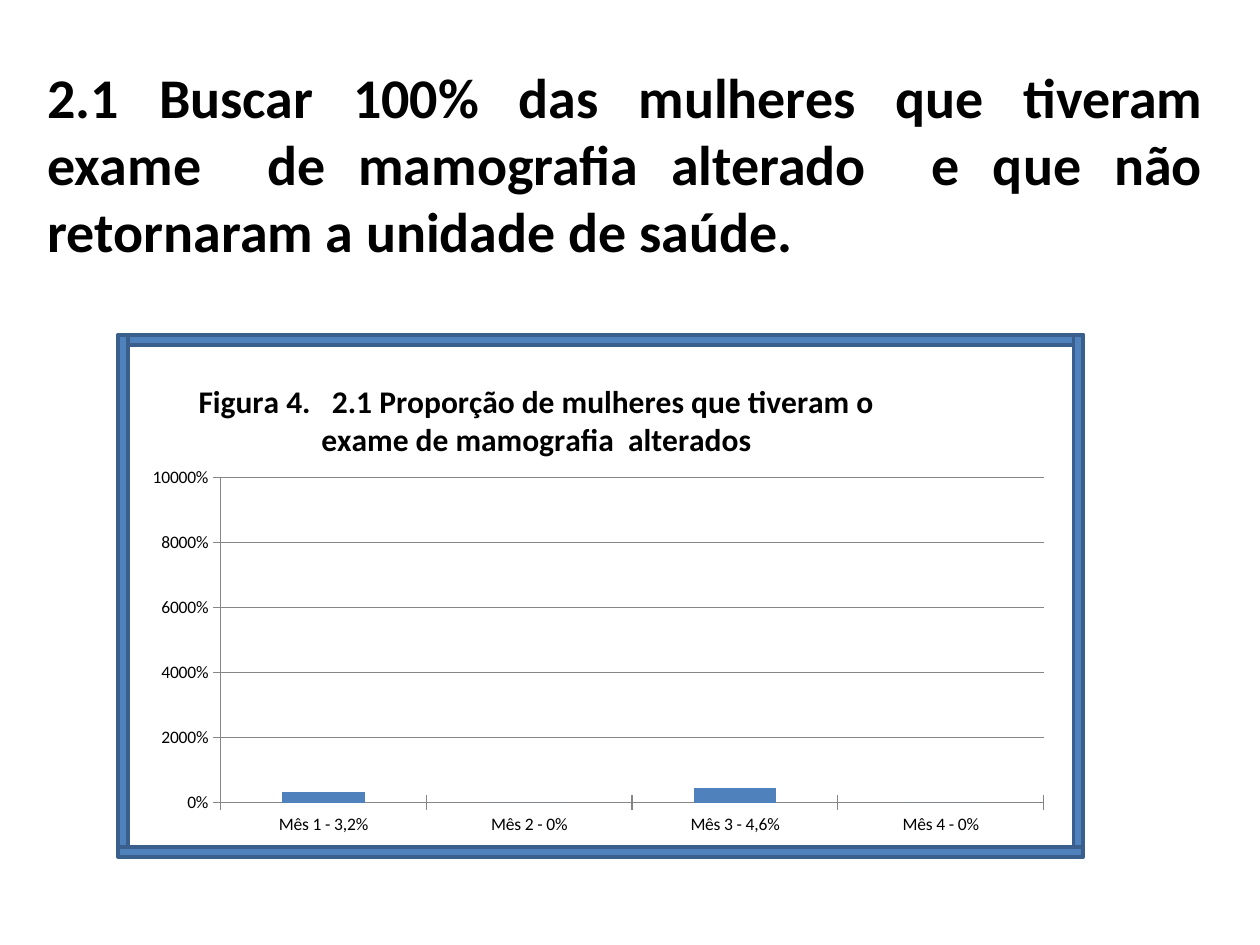
from lxml.etree import SubElement
from pptx import Presentation
from pptx.chart.data import CategoryChartData
from pptx.dml.color import RGBColor
from pptx.enum.chart import XL_CHART_TYPE, XL_TICK_MARK
from pptx.enum.shapes import MSO_SHAPE
from pptx.enum.text import MSO_ANCHOR, MSO_AUTO_SIZE, PP_ALIGN
from pptx.oxml import parse_xml
from pptx.oxml.ns import nsdecls, qn
from pptx.util import Pt


def color(value):
    return RGBColor.from_string(value)


def write(tf, text, size=32, bold=True, align=PP_ALIGN.JUSTIFY, font="Calibri", fill="000000"):
    p = tf.paragraphs[0]
    p.alignment = align
    r = p.add_run()
    r.text = text
    r.font.size, r.font.bold, r.font.name = Pt(size), bold, font
    r.font.color.rgb = color(fill)
    return p


def manual_layout(inner=False, **fractions):
    layout = parse_xml(f"<c:layout {nsdecls('c')}><c:manualLayout/></c:layout>")
    entries = {"layoutTarget": "inner"} if inner else {}
    entries.update(xMode="edge", yMode="edge", **fractions)
    for tag, value in entries.items():
        SubElement(layout[0], qn(f"c:{tag}")).set("val", str(value))
    return layout


class Deck:
    """Hold the slide, its colours and its element builders."""

    blue, border, grid = "4F81BD", "3A5F8C", "868686"

    def __init__(self, prs):
        self.s = prs.slides.add_slide(prs.slide_layouts[1])
        title = self.s.shapes.title._element
        title.getparent().remove(title)

    def body(self, text, x, y, w, h):
        sp = self.s.placeholders[1]
        sp.left, sp.top, sp.width, sp.height = Pt(x), Pt(y), Pt(w), Pt(h)
        tf = sp.text_frame
        tf.word_wrap = True
        tf.auto_size = MSO_AUTO_SIZE.NONE
        tf.vertical_anchor = MSO_ANCHOR.TOP
        p = write(tf, text)
        pPr = p._p.get_or_add_pPr()
        pPr.set("marL", "0")
        pPr.set("indent", "0")
        SubElement(pPr, qn("a:buNone"))

    def bar(self, x, y, w, h):
        sp = self.s.shapes.add_shape(MSO_SHAPE.RECTANGLE, Pt(x), Pt(y), Pt(w), Pt(h))
        sp.shadow.inherit = False
        sp.fill.solid()
        sp.fill.fore_color.rgb = color(self.blue)
        sp.line.color.rgb = color(self.border)
        sp.line.width = Pt(2)

    def frame(self, x, y, w, h, t):
        for top in (y, y + h):
            self.bar(x, top, w, t)
        for left in (x, x + w - t):
            self.bar(left, y, t, h)

    def chart(self, title, values, x, y, w, h):
        data = CategoryChartData()
        data.categories = list(values)
        data.add_series("Series 1", values.values())
        chart = self.s.shapes.add_chart(
            XL_CHART_TYPE.COLUMN_CLUSTERED, Pt(x), Pt(y), Pt(w), Pt(h), data).chart
        chart.has_legend = False
        chart.font.name, chart.font.size = "Calibri", Pt(10)
        chart.font.color.rgb = color("000000")
        write(chart.chart_title.text_frame, title, size=18, align=PP_ALIGN.CENTER)
        chart.chart_title.include_in_layout = False
        plot = chart.plots[0]
        plot.gap_width, plot.vary_by_categories = 150, False
        fill = plot.series[0].format.fill
        fill.solid()
        fill.fore_color.rgb = color(self.blue)
        axis = chart.value_axis
        axis.minimum_scale, axis.maximum_scale, axis.major_unit = 0, 100, 20
        axis.has_major_gridlines = True
        axis.tick_labels.number_format = "0%"
        axis.tick_labels.number_format_is_linked = False
        for item in (axis, chart.category_axis):
            item.major_tick_mark = XL_TICK_MARK.CROSS
        for item in (axis, chart.category_axis, axis.major_gridlines):
            item.format.line.color.rgb = color(self.grid)
            item.format.line.width = Pt(0.75)
        space = chart._chartSpace
        for old in space.xpath(".//c:title/c:layout | .//c:plotArea/c:layout"):
            old.getparent().remove(old)
        space.xpath(".//c:title/c:tx")[0].addnext(manual_layout(x=0.06, y=0.04))
        space.xpath(".//c:plotArea")[0].insert(
            0, manual_layout(True, x=0.09, y=0.25, w=0.89, h=0.66))


def main():
    prs = Presentation()
    prs.slide_width, prs.slide_height = Pt(720), Pt(540)
    deck = Deck(prs)
    deck.body("2.1 Buscar 100% das mulheres que tiveram exame  de mamografia alterado  "
              "e que não retornaram a unidade de saúde.", 20, 32, 675, 493)
    deck.chart("Figura 4.   2.1 Proporção de mulheres que tiveram o exame de mamografia  alterados",
               {"Mês 1 - 3,2%": 3.2, "Mês 2 - 0%": 0, "Mês 3 - 4,6%": 4.6, "Mês 4 - 0%": 0},
               78.5, 202.5, 528.5, 281.5)
    deck.frame(67.5, 191.5, 551.5, 292.5, 5.7)
    prs.save("out.pptx")


if __name__ == "__main__":
    main()
